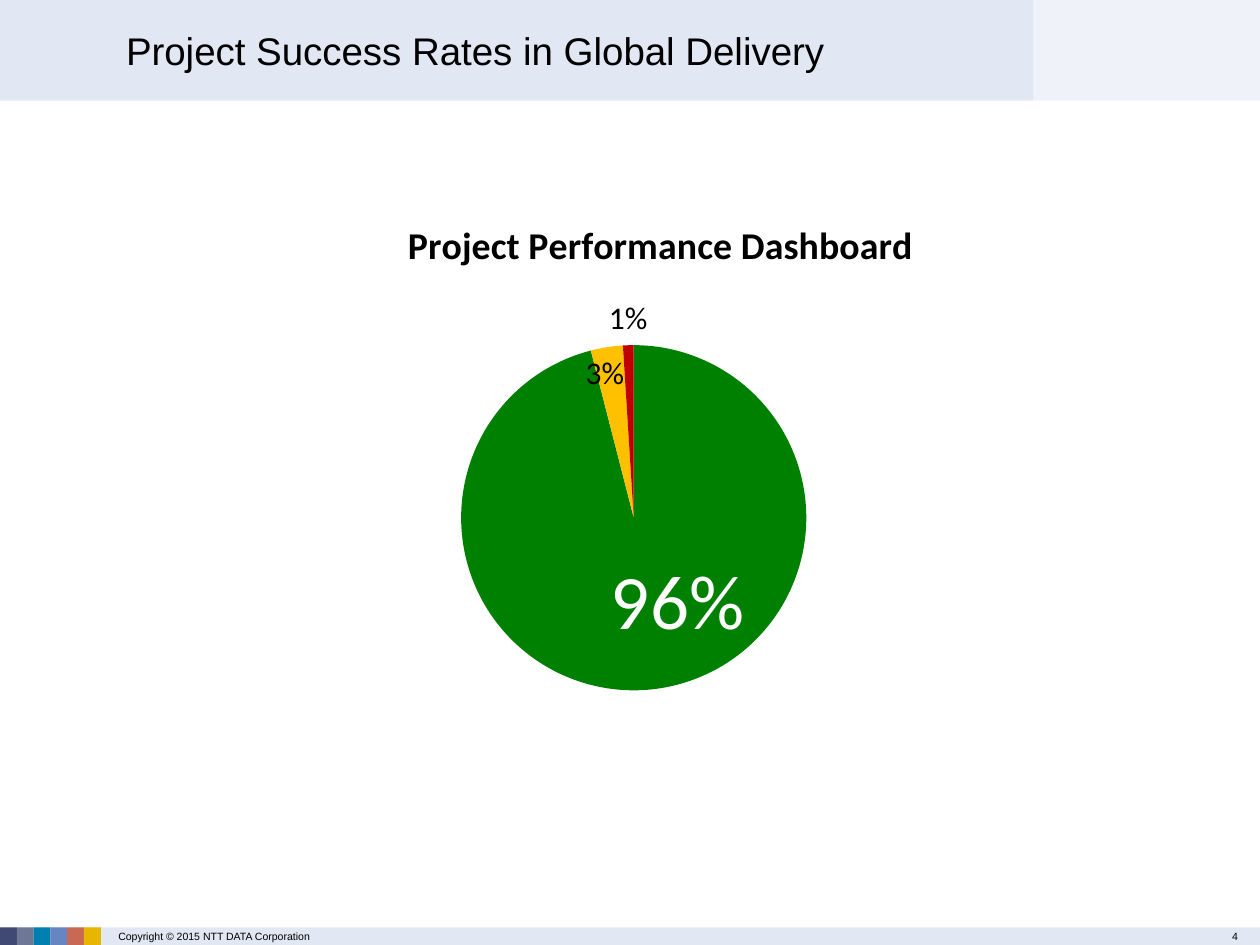
import lxml.etree
import pptx
import pptx.chart.data
import pptx.dml.color
import pptx.enum.chart
import pptx.enum.shapes
import pptx.enum.text
import pptx.oxml
import pptx.oxml.ns
import pptx.util

Inches = pptx.util.Inches
Pt = pptx.util.Pt
qn = pptx.oxml.ns.qn
Spot = pptx.enum.chart.XL_LABEL_POSITION

COLORS = {
    "band": "E1E7F3", "text": "000000", "white": "FFFFFF",
    "green": "008000", "amber": "FFC000", "red": "C00000",
    "navy": "3F4973", "slate": "6F7796", "teal": "0080B1",
    "blue": "6785C1", "coral": "C96953", "gold": "E6B600",
}
SWATCHES = ["navy", "slate", "teal", "blue", "coral", "gold"]
SLICES = [
    ("1", 96, "green", 44, "white", Spot.CENTER, 0.03),
    ("2", 3, "amber", 18, "text", Spot.INSIDE_END, -0.02),
    ("3", 1, "red", 18, "text", Spot.OUTSIDE_END, 0),
]
SIZE_EXT = (
    '<c:extLst xmlns:c="http://schemas.openxmlformats.org/drawingml/2006/chart">'
    '<c:ext uri="{CE6537A1-D6FC-4f65-9D91-7224C49458BB}" '
    'xmlns:c15="http://schemas.microsoft.com/office/drawing/2012/chart">'
    '<c15:layout><c:manualLayout><c:w val="0.2"/><c:h val="0.18"/>'
    '</c:manualLayout></c15:layout></c:ext></c:extLst>')


def color(name):
    return pptx.dml.color.RGBColor.from_string(COLORS[name])


def style(font, size, name="text", face="Arial", bold=False):
    font.size = Pt(size)
    font.name = face
    font.bold = bold
    font.color.rgb = color(name)


def add_rect(slide, box, name, alpha=None):
    rect = slide.shapes.add_shape(
        pptx.enum.shapes.MSO_SHAPE.RECTANGLE, *map(Inches, box))
    rect.shadow.inherit = False
    rect.fill.solid()
    rect.fill.fore_color.rgb = color(name)
    rect.line.fill.background()
    if alpha:
        tint = next(rect._element.spPr.iter(qn("a:srgbClr")))
        lxml.etree.SubElement(tint, qn("a:alpha")).set("val", str(alpha * 1000))


def add_note(slide, box, text):
    frame = slide.shapes.add_textbox(*map(Inches, box)).text_frame
    frame.word_wrap = True
    frame.margin_top = frame.margin_bottom = 0
    run = frame.paragraphs[0].add_run()
    run.text = text
    style(run.font, 6)


def add_header(slide, box):
    left, top, width, height = box
    main = 8.2
    add_rect(slide, (left + main, top, width - main, height), "band", 50)
    add_rect(slide, (left, top, main, height), "band")
    title = slide.shapes.title
    title.left, title.top = Inches(left + 0.8), Inches(top)
    title.width, title.height = Inches(main - 0.8), Inches(height)
    slide.shapes._spTree.append(title._element)
    frame = title.text_frame
    frame.word_wrap = True
    frame.auto_size = pptx.enum.text.MSO_AUTO_SIZE.NONE
    frame.vertical_anchor = pptx.enum.text.MSO_ANCHOR.MIDDLE
    frame.margin_left = frame.margin_right = Inches(0.2)
    line = frame.paragraphs[0]
    line.alignment = pptx.enum.text.PP_ALIGN.LEFT
    run = line.add_run()
    run.text = "Project Success Rates in Global Delivery"
    style(run.font, 22)


def add_footer(slide, box):
    left, top, width, height = box
    add_rect(slide, box, "band")
    step = 0.8 / len(SWATCHES)
    for i, name in enumerate(SWATCHES):
        add_rect(slide, (left + i * step, top, step, height), name)
    add_note(slide, (left + 0.84, top + 0.02, 2.58, 0.1),
             "Copyright © 2015 NTT DATA Corporation")
    add_note(slide, (left + width - 0.32, top + 0.02, 0.32, 0.1), "4")


def set_layout(parent, index, **parts):
    for old in parent.findall(qn("c:layout")):
        parent.remove(old)
    layout = lxml.etree.Element(qn("c:layout"))
    manual = lxml.etree.SubElement(layout, qn("c:manualLayout"))
    for key, value in parts.items():
        lxml.etree.SubElement(manual, qn("c:" + key)).set("val", str(value))
    parent.insert(index, layout)


def set_label(label, shift):
    if shift:
        set_layout(label, 1, x=shift, y=0)
    next(label.iter(qn("a:bodyPr"))).set("wrap", "none")
    label.append(pptx.oxml.parse_xml(SIZE_EXT))


def add_pie(slide, box):
    left, top, width, height = box
    data = pptx.chart.data.CategoryChartData(number_format='0"%"')
    data.categories = [part[0] for part in SLICES]
    name = "Project Performance Dashboard"
    data.add_series(name, [part[1] for part in SLICES])
    chart = slide.shapes.add_chart(
        pptx.enum.chart.XL_CHART_TYPE.PIE, *map(Inches, box), data).chart
    style(chart.font, 18, face="Calibri")
    chart.has_legend = False
    chart.has_title = True
    run = chart.chart_title.text_frame.paragraphs[0].add_run()
    run.text = name
    style(run.font, 21.6, face="Calibri", bold=True)
    set_layout(chart.chart_title._element, 1,
               xMode="edge", yMode="edge", x=0.27, y=0.03)
    plot = chart.plots[0]
    plot.vary_by_categories = True
    side = 2.74
    set_layout(plot._element.getparent(), 0, layoutTarget="inner",
               xMode="edge", yMode="edge",
               x=(3.66 - left) / width, y=(2.74 - top) / height,
               w=side / width, h=side / height)
    points = plot.series[0].points
    for i, (_, _, fill, size, ink, spot, _) in enumerate(SLICES):
        point = points[i]
        point.format.fill.solid()
        point.format.fill.fore_color.rgb = color(fill)
        point.format.line.fill.background()
        style(point.data_label.font, size, ink, "Calibri")
        point.data_label.position = spot
    for label, part in zip(plot._element.iter(qn("c:dLbl")), SLICES):
        set_label(label, part[-1])


def main():
    deck = pptx.Presentation()
    deck.slide_width, deck.slide_height = Inches(10), Inches(7.5)
    slide = deck.slides.add_slide(deck.slide_layouts[5])
    add_header(slide, (0, 0, 10, 0.8))
    add_footer(slide, (0, 7.36, 10, 0.14))
    add_pie(slide, (0.8, 1.53, 8.83, 4.95))
    deck.save("out.pptx")


if __name__ == "__main__":
    main()
